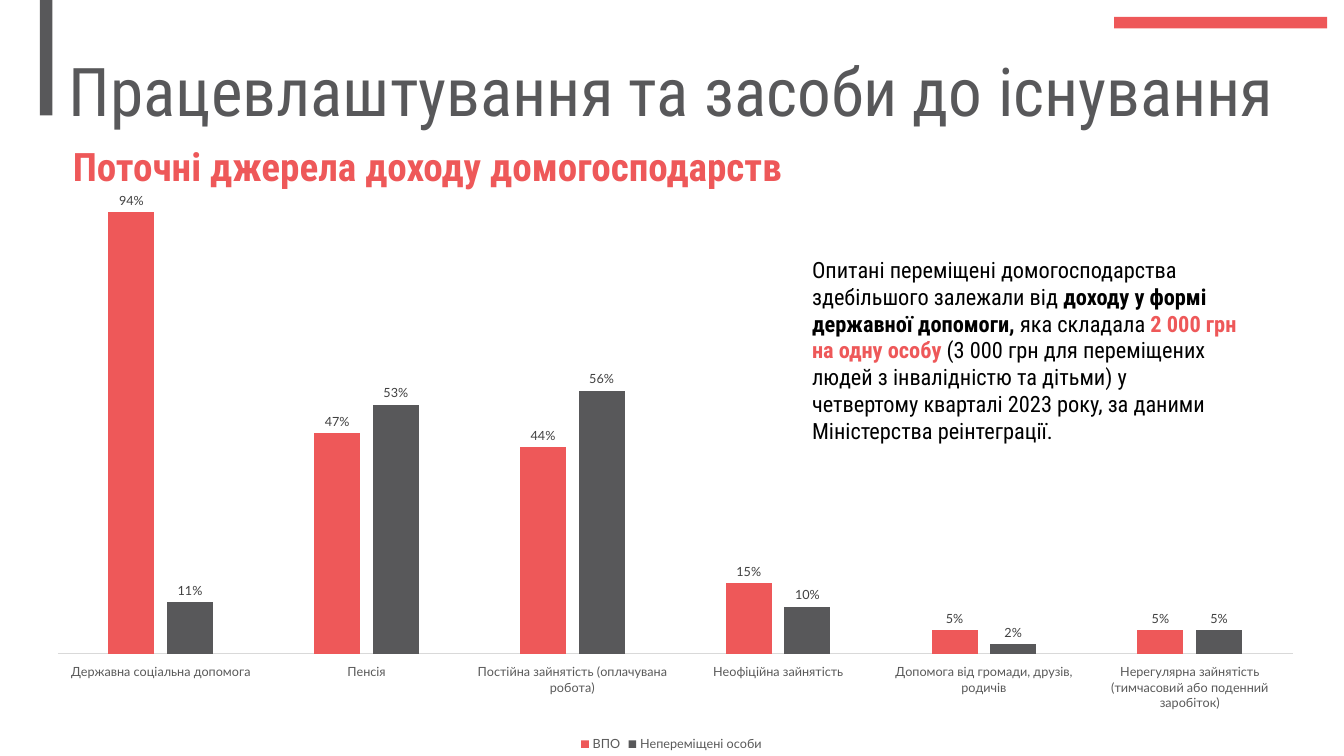
from lxml.etree import SubElement
from pptx import Presentation
from pptx.chart.data import CategoryChartData
from pptx.dml.color import RGBColor
from pptx.enum.chart import XL_CHART_TYPE, XL_LABEL_POSITION, XL_LEGEND_POSITION, XL_TICK_LABEL_POSITION, XL_TICK_MARK
from pptx.enum.shapes import MSO_SHAPE
from pptx.enum.text import MSO_ANCHOR, MSO_AUTO_SIZE, PP_ALIGN
from pptx.oxml import parse_xml
from pptx.oxml.ns import nsdecls, qn
from pptx.util import Pt

PX = 9525
RED = RGBColor(0xEE, 0x58, 0x59)
GRAY = RGBColor(0x58, 0x58, 0x5A)
BLACK = RGBColor(0, 0, 0)
AXIS_TEXT = RGBColor(0x59, 0x59, 0x59)
LABEL_TEXT = RGBColor(0x40, 0x40, 0x40)
AXIS_LINE = RGBColor(0xD9, 0xD9, 0xD9)
HEADING_FONT = "Roboto Condensed"
CHART_FONT = "Lato"


def emu(*lengths):
    return [length * PX for length in lengths]


def set_font(font, color, **values):
    for name, value in values.items():
        setattr(font, name, value)
    font.color.rgb = color


deck = Presentation()
deck.slide_width, deck.slide_height = emu(1280, 720)
page = deck.slides.add_slide(deck.slide_layouts[5])

for place, color in [((1061, 16, 203, 11), RED), ((38, 0, 12, 110), GRAY)]:
    bar = page.shapes.add_shape(MSO_SHAPE.RECTANGLE, *emu(*place))
    bar.shadow.inherit = False
    bar.fill.solid()
    bar.fill.fore_color.rgb = color
    bar.line.fill.background()

title = page.shapes.title
subtitle = page.shapes.add_textbox(*emu(60, 131, 1169, 75))
comment = page.shapes.add_textbox(*emu(764, 239, 424, 193))
title.left, title.top, title.width, title.height = emu(56, 58, 1205, 64)

texts = [
    (title, 48, MSO_ANCHOR.MIDDLE, 0.9, [("Працевлаштування та засоби до існування", GRAY, False)]),
    (subtitle, 28, MSO_ANCHOR.TOP, 1.0, [("Поточні джерела доходу домогосподарств", RED, True)]),
    (comment, 16, MSO_ANCHOR.TOP, 1.0, [
        ("Опитані переміщені домогосподарства здебільшого залежали від ", BLACK, False),
        ("доходу у формі державної допомоги, ", BLACK, True),
        ("яка складала ", BLACK, False),
        ("2 000 грн на одну особу", RED, True),
        (" (3 000 грн для переміщених людей з інвалідністю та дітьми) у четвертому кварталі 2023 року, "
         "за даними Міністерства реінтеграції.", BLACK, False),
    ]),
]
for box, size, anchor, spacing, spans in texts:
    frame = box.text_frame
    frame_format = {"word_wrap": True, "auto_size": MSO_AUTO_SIZE.NONE, "vertical_anchor": anchor}
    for name, value in frame_format.items():
        setattr(frame, name, value)
    para = frame.paragraphs[0]
    para.alignment = PP_ALIGN.LEFT
    para.line_spacing = spacing
    for text, color, bold in spans:
        span = para.add_run()
        span.text = text
        set_font(span.font, color, name=HEADING_FONT, size=Pt(size), bold=bold)

income = CategoryChartData(number_format="0%")
income.categories = [
    "Державна соціальна допомога",
    "Пенсія",
    "Постійна зайнятість (оплачувана робота)",
    "Неофіційна зайнятість",
    "Допомога від громади, друзів, родичів",
    "Нерегулярна зайнятість (тимчасовий або поденний заробіток)",
]
income.add_series("ВПО", [0.94, 0.47, 0.44, 0.15, 0.05, 0.05])
income.add_series("Непереміщені особи", [0.11, 0.53, 0.56, 0.1, 0.02, 0.05])
chart = page.shapes.add_chart(XL_CHART_TYPE.COLUMN_CLUSTERED, *emu(37, 161, 1205, 559), income).chart
set_font(chart.font, BLACK, name=CHART_FONT, size=Pt(10))
chart.has_title = False
chart.has_legend = True
chart.legend.position = XL_LEGEND_POSITION.BOTTOM
chart.legend.include_in_layout = False
set_font(chart.legend.font, AXIS_TEXT, name=CHART_FONT, size=Pt(9))

categories = chart.category_axis
categories.major_tick_mark = XL_TICK_MARK.NONE
categories.tick_label_position = XL_TICK_LABEL_POSITION.LOW
categories.format.line.color.rgb = AXIS_LINE
categories.format.line.width = Pt(0.75)
set_font(categories.tick_labels.font, AXIS_TEXT, name=CHART_FONT, size=Pt(9))

axis_format = {"minimum_scale": 0, "maximum_scale": 1, "has_major_gridlines": False, "visible": False}
for name, value in axis_format.items():
    setattr(chart.value_axis, name, value)

plot = chart.plots[0]
plot.gap_width = 219
plot.overlap = -27
plot.vary_by_categories = False
for series, color in zip(plot.series, [RED, GRAY]):
    series.format.fill.solid()
    series.format.fill.fore_color.rgb = color
    labels = series.data_labels
    label_format = {
        "show_value": True,
        "number_format": "0%",
        "number_format_is_linked": False,
        "position": XL_LABEL_POSITION.OUTSIDE_END,
    }
    for name, value in label_format.items():
        setattr(labels, name, value)
    set_font(labels.font, LABEL_TEXT, name=CHART_FONT, size=Pt(9))

plot_area = chart._chartSpace.find(qn("c:chart")).find(qn("c:plotArea"))
for old_layout in plot_area.findall(qn("c:layout")):
    plot_area.remove(old_layout)
layout = parse_xml(f"<c:layout {nsdecls('c')}><c:manualLayout/></c:layout>")
plot_area.insert(0, layout)
plot_layout = {
    "layoutTarget": "inner", "xMode": "edge", "yMode": "edge",
    "x": 0.015, "y": 0.026, "w": 0.976, "h": 0.8,
}
for name, value in plot_layout.items():
    SubElement(layout[0], qn(f"c:{name}")).set("val", str(value))

deck.save("out.pptx")
